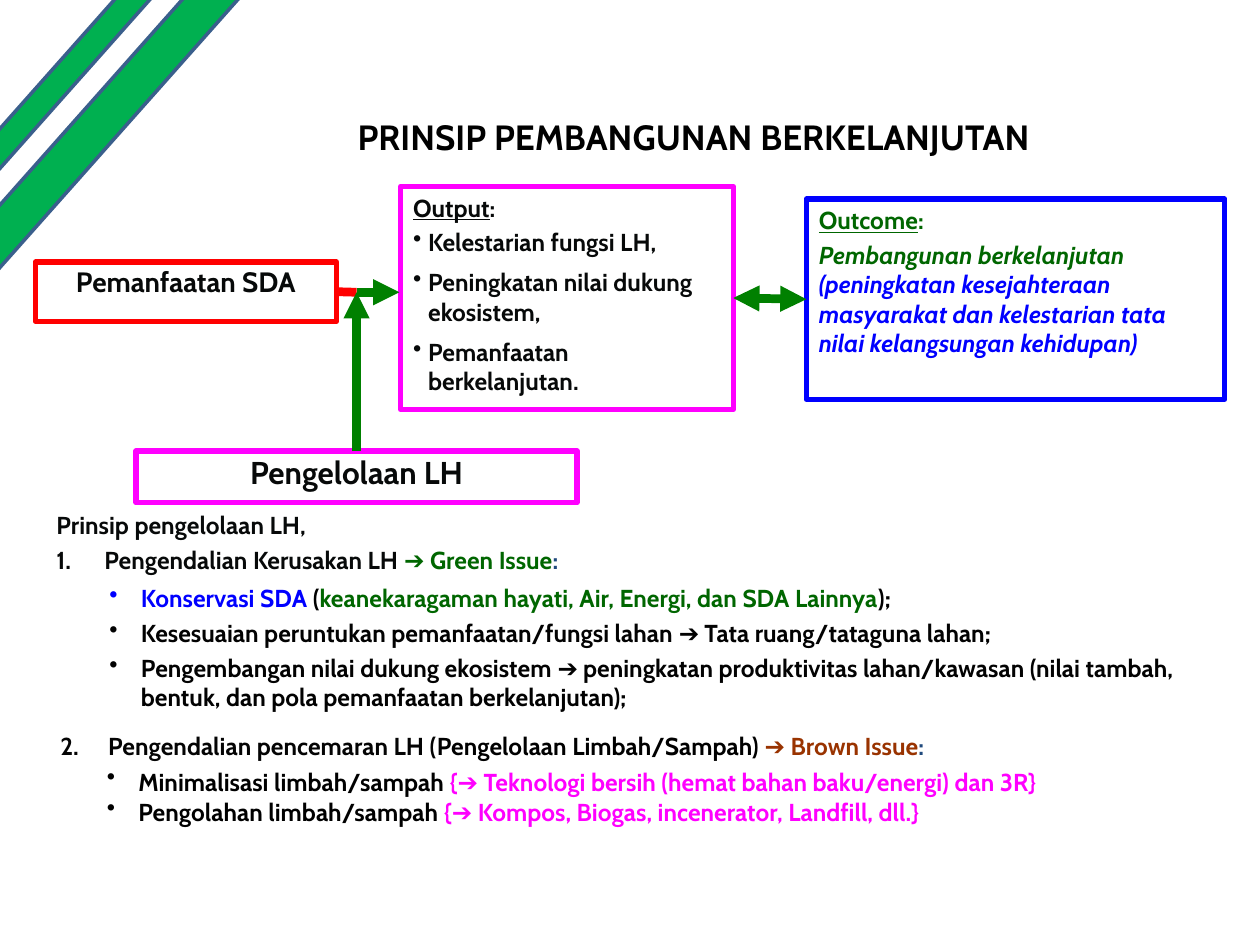
from lxml.etree import SubElement as Sub
from pptx import Presentation
from pptx.dml.color import RGBColor
from pptx.enum.shapes import MSO_CONNECTOR as Link, MSO_SHAPE as Form
from pptx.enum.text import MSO_ANCHOR as Anchor, PP_ALIGN as Align
from pptx.oxml.ns import qn
from pptx.util import Inches, Pt

INK, BLACK, BLUE, NAVY = "070909", "000000", "0000FF", "1F497D"
GREEN, LEAF, PINK, RED, BROWN = "008000", "006600", "FF00FF", "FF0000", "993300"


def color(code):
    return RGBColor.from_string(code)


class Deck:
    font = "Cabin"
    size = 14

    def __init__(self):
        self.prs = Presentation()
        self.prs.slide_width, self.prs.slide_height = Inches(10), Inches(7.5)
        self.slide = self.prs.slides.add_slide(self.prs.slide_layouts[5])

    def put(self, obj, values):
        for name, value in values.items():
            setattr(obj, name, value)

    def place(self, shape, spot):
        names = ("left", "top", "width", "height")
        self.put(shape, dict(zip(names, map(Inches, spot))))

    def typeset(self, frame, paras, size=None, anchor=Anchor.TOP):
        self.put(frame, {"word_wrap": True, "vertical_anchor": anchor})
        for i, (runs, form) in enumerate(paras):
            para = frame.paragraphs[0] if i == 0 else frame.add_paragraph()
            form = dict(form)
            hang, mark, tab = (form.pop(k, None) for k in ("hang", "mark", "tab"))
            if i == 0:
                form.pop("space_before", None)
            self.put(para, {"alignment": Align.LEFT, **form})
            props = para._p.get_or_add_pPr()
            if hang:
                props.set("marL", str(Inches(hang)))
                props.set("indent", str(-Inches(hang)))
            if mark:
                Sub(props, qn("a:buChar"), char="•")
            if tab:
                tabs = Sub(props, qn("a:tabLst"))
                Sub(tabs, qn("a:tab"), pos=str(Inches(tab)), algn="l")
            for text, code, *more in runs:
                run = para.add_run()
                run.text = text
                look = {"name": self.font, "size": Pt(size or self.size), "bold": True}
                for extra in more:
                    look[extra] = True
                self.put(run.font, look)
                run.font.color.rgb = color(code)

    def title(self, spot, text):
        shape = self.slide.shapes.title
        self.place(shape, spot)
        line = ([(text, BLACK)], {"alignment": Align.CENTER})
        self.typeset(shape.text_frame, [line], 20, Anchor.MIDDLE)

    def text(self, spot, paras):
        box = self.slide.shapes.add_textbox(*map(Inches, spot))
        self.typeset(box.text_frame, paras)

    def rect(self, spot, edge, width=3, fill=None, turn=0):
        box = self.slide.shapes.add_shape(Form.RECTANGLE, *map(Inches, spot))
        box.shadow.inherit = False
        box.rotation = turn
        if fill:
            box.fill.solid()
            box.fill.fore_color.rgb = color(fill)
        else:
            box.fill.background()
        box.line.color.rgb = color(edge)
        box.line.width = Pt(width)
        return box

    def box(self, spot, edge, paras, size=None):
        box = self.rect(spot, edge)
        self.typeset(box.text_frame, paras, size)
        return box

    def line(self, start, end, code, ends=(), begin=None, stop=None):
        link = self.slide.shapes.add_connector(
            Link.STRAIGHT, *map(Inches, (*start, *end)))
        if begin:
            link.begin_connect(*begin)
        if stop:
            link.end_connect(*stop)
        link.line.color.rgb = color(code)
        link.line.width = Pt(5)
        props = link._element.spPr
        for tag in ends:
            Sub(props.find(qn("a:ln")), qn("a:" + tag), type="triangle")
        Sub(props, qn("a:effectLst"))


def main():
    deck = Deck()
    near = {"space_before": Pt(3)}
    mid = {"alignment": Align.CENTER, "line_spacing": 0.9}
    item = {**near, "hang": 0.12, "mark": True, "space_after": Pt(3)}
    step = {**near, "hang": 0.38, "tab": 0.38}
    dot = {**near, "hang": 0.25, "mark": True}

    deck.title((1.42, 0.83, 8.17, 0.5), "PRINSIP PEMBANGUNAN BERKELANJUTAN")

    use = deck.box((0.28, 2.08, 2.39, 0.47), RED, [([("Pemanfaatan SDA", INK)], mid)], 16)
    goals = ("Kelestarian fungsi LH,", "Peningkatan nilai dukung ekosistem,",
             "Pemanfaatan berkelanjutan.")
    output = deck.box(
        (3.18, 1.48, 2.64, 1.77), PINK,
        [([("Output", INK, "underline"), (":", INK)], near)]
        + [([(goal, INK)], item) for goal in goals])
    outcome = deck.box((6.4, 1.58, 3.32, 1.59), BLUE, [
        ([("Outcome", LEAF, "underline"), (":", LEAF)], near),
        ([("Pembangunan berkelanjutan ", LEAF, "italic"),
          ("(peningkatan kesejahteraan masyarakat dan kelestarian tata nilai "
           "kelangsungan kehidupan)", BLUE, "italic")], near)])
    care = deck.box((1.08, 3.58, 3.5, 0.41), PINK, [([("Pengelolaan LH", INK)], mid)], 18)

    joint = (2.83, 2.32)
    deck.line((2.67, 2.32), joint, RED, begin=(use, 3))
    deck.line(joint, (3.17, 2.32), GREEN, ["tailEnd"])
    deck.line((5.82, 2.37), (6.4, 2.37), GREEN, ["headEnd", "tailEnd"],
              (output, 3), (outcome, 1))
    deck.line((2.83, 3.58), joint, GREEN, ["tailEnd"], (care, 0))

    deck.text((0.35, 4, 8.56, 0.61), [
        ([("Prinsip pengelolaan LH,", INK)], step),
        ([("1.\tPengendalian Kerusakan LH ", INK), ("➔ Green Issue", LEAF),
          (":", NAVY)], step)])
    deck.text((0.77, 4.58, 8.81, 1.12), [
        ([("Konservasi SDA", BLUE), (" (", BLACK),
          ("keanekaragaman hayati, Air, Energi, dan SDA Lainnya", LEAF),
          (");", BLACK)], dot),
        ([("Kesesuaian peruntukan pemanfaatan/fungsi lahan ➔ "
           "Tata ruang/tataguna lahan;", "020202")], dot),
        ([("Pengembangan nilai dukung ekosistem ➔ peningkatan produktivitas "
           "lahan/kawasan (nilai tambah, bentuk, dan pola pemanfaatan "
           "berkelanjutan);", "020202")], dot)])
    deck.text((0.38, 5.75, 8.62, 0.33), [
        ([("2.\tPengendalian pencemaran LH (", "040404"),
          ("Pengelolaan Limbah/Sampah) ", BLACK), ("➔ Brown Issue", BROWN),
          (":", NAVY)], step)])
    deck.text((0.75, 6.14, 9.05, 0.5), [
        ([("Minimalisasi limbah/sampah ", BLACK),
          ("{➔ Teknologi bersih (hemat bahan baku/energi) dan 3R}", PINK)],
         {**dot, "line_spacing": 0.5, "space_after": Pt(3)}),
        ([("Pengolahan limbah/sampah ", BLACK),
          ("{➔ Kompos, Biogas, incenerator, Landfill, dll.}", PINK)],
         {**dot, "line_spacing": 0.6, "space_before": Pt(4.5)})])

    for spot in ((-0.92, 0.42, 3, 0.21), (-0.71, 0.82, 3, 0.33)):
        deck.rect(spot, "3A5F8C", 2, "00B050", 311.6)

    deck.prs.save("out.pptx")


if __name__ == "__main__":
    main()
